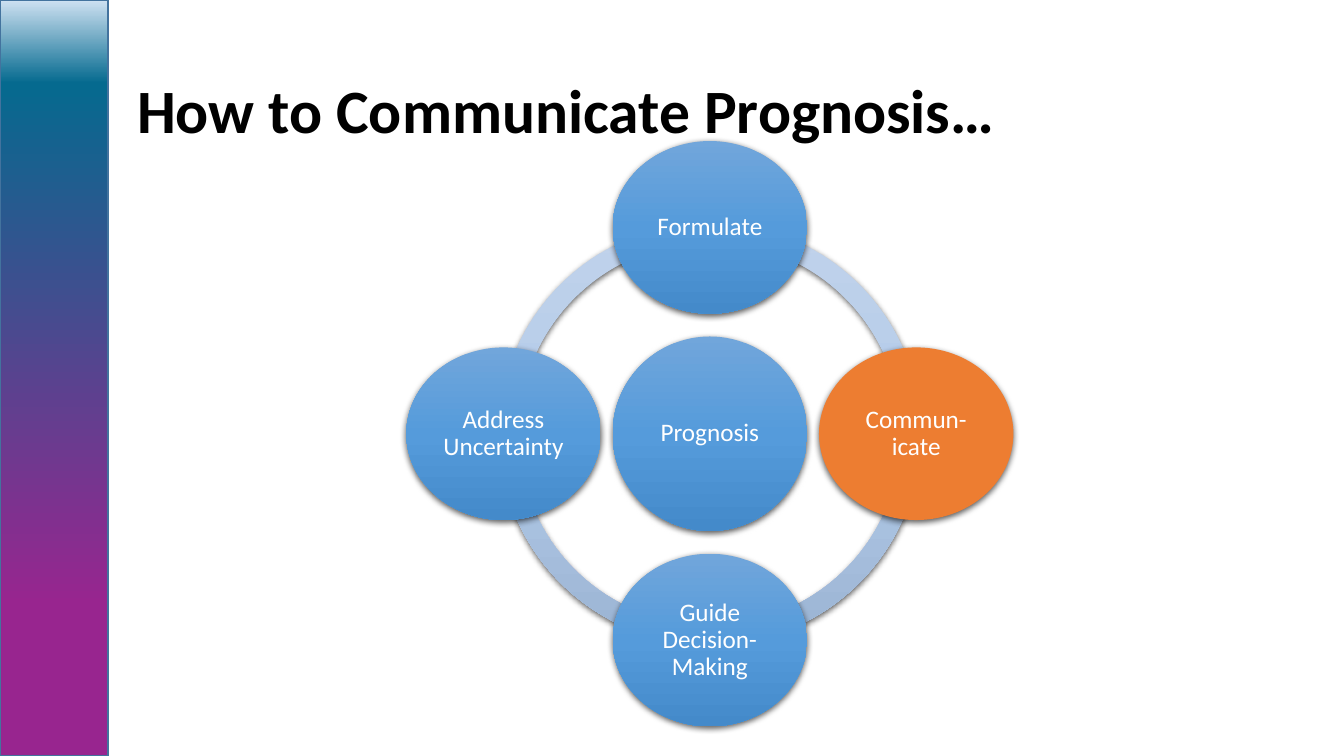
import dataclasses
import math
from typing import Any, Optional

import lxml.etree
import pptx
import pptx.dml.color
import pptx.enum.shapes
import pptx.enum.text
import pptx.oxml.ns
import pptx.util

Cm = pptx.util.Cm
Pt = pptx.util.Pt
qn = pptx.oxml.ns.qn
Shapes = pptx.enum.shapes.MSO_SHAPE
Align = pptx.enum.text.PP_ALIGN

Stops = list[tuple[int, str]]
BAR_STOPS: Stops = [(20, "98258F"), (89, "056A8F"), (100, "CEE1F2")]
RING_STOPS: Stops = [(0, "C0D2EB"), (50, "B3CBE9"), (100, "9BB4D3")]
BLUE_STOPS: Stops = [(0, "71A6DB"), (50, "559BDB"), (100, "448ACA")]

# Cycle geometry in centimetres
CENTER_X, CENTER_Y = 17.89, 10.93
ORBIT = 5.2
RING_SIZE = 10.64
RING_THICKNESS = 0.046
QUARTER_TURN = 54  # 90 degrees in block-arc adjustment units
NODE_WIDTH, NODE_HEIGHT = 4.9, 4.35


@dataclasses.dataclass
class Node:
    text: str
    angle: float = 0  # degrees clockwise from the right
    orbit: float = ORBIT
    height: float = NODE_HEIGHT
    color: Optional[str] = None


NODES = [
    Node("Prognosis", orbit=0, height=NODE_WIDTH),
    Node("Formulate", 270),
    Node("Commun-icate", 0, color="ED7D31"),
    Node("Guide Decision-Making", 90),
    Node("Address Uncertainty", 180),
]


def color(value: str) -> pptx.dml.color.RGBColor:
    return pptx.dml.color.RGBColor.from_string(value)


def fill_gradient(shape: Any, stops: Stops, angle: int) -> None:
    """Fill with any number of stops; the angle runs clockwise."""
    shape.fill.gradient()
    shape.fill.gradient_angle = 360 - angle
    stop_list = shape.element.spPr.find(qn("a:gradFill")).find(qn("a:gsLst"))
    for default_stop in list(stop_list):
        stop_list.remove(default_stop)
    for position, value in stops:
        stop = lxml.etree.SubElement(stop_list, qn("a:gs"), pos=str(position * 1000))
        lxml.etree.SubElement(stop, qn("a:srgbClr"), val=value)


def add_shadow(shape: Any) -> None:
    effects = shape.element.spPr.find(qn("a:effectLst"))
    shadow = lxml.etree.SubElement(
        effects, qn("a:outerShdw"), blurRad=str(Pt(4.5)), dist=str(Pt(1.5)),
        dir="5400000", algn="ctr", rotWithShape="0")
    shadow_color = lxml.etree.SubElement(shadow, qn("a:srgbClr"), val="000000")
    lxml.etree.SubElement(shadow_color, qn("a:alpha"), val="63000")


def add_centered(slide: Any, kind: Any, x: float, y: float, width: float, height: float) -> Any:
    """Add a borderless shape with a soft shadow around a centre point."""
    shape = slide.shapes.add_shape(
        kind, Cm(x - width / 2), Cm(y - height / 2), Cm(width), Cm(height))
    shape.line.fill.background()
    shape.shadow.inherit = False
    add_shadow(shape)
    return shape


def write_text(shape: Any, text: str, *, size: float, value: str, bold: bool = False,
               alignment: Any = Align.LEFT, inset: Optional[float] = None) -> None:
    frame = shape.text_frame
    frame.word_wrap = True
    frame.auto_size = pptx.enum.text.MSO_AUTO_SIZE.NONE
    frame.vertical_anchor = pptx.enum.text.MSO_ANCHOR.MIDDLE
    if inset is not None:
        frame.margin_left = frame.margin_right = Cm(inset)
        frame.margin_top = frame.margin_bottom = Cm(inset)
    paragraph = frame.paragraphs[0]
    paragraph.alignment = alignment
    paragraph.line_spacing = 0.9
    run = paragraph.add_run()
    run.text = text
    run.font.name = "Calibri"
    run.font.size = Pt(size)
    run.font.bold = bold
    run.font.color.rgb = color(value)


def add_side_bar(slide: Any, height: int) -> None:
    bar = slide.shapes.add_shape(Shapes.RECTANGLE, 0, 0, Cm(2.72), height)
    bar.shadow.inherit = False
    fill_gradient(bar, BAR_STOPS, 270)
    bar.line.color.rgb = color("43739E")
    bar.line.width = Pt(1)


def add_ring_quarter(slide: Any, quarter: int) -> None:
    arc = add_centered(slide, Shapes.BLOCK_ARC, CENTER_X, CENTER_Y, RING_SIZE, RING_SIZE)
    arc.adjustments[0] = quarter * QUARTER_TURN
    arc.adjustments[1] = (quarter + 1) % 4 * QUARTER_TURN
    arc.adjustments[2] = RING_THICKNESS
    fill_gradient(arc, RING_STOPS, 90)


def add_node(slide: Any, node: Node) -> None:
    angle = math.radians(node.angle)
    x = CENTER_X + node.orbit * math.cos(angle)
    y = CENTER_Y + node.orbit * math.sin(angle)
    ellipse = add_centered(slide, Shapes.OVAL, x, y, NODE_WIDTH, node.height)
    if node.color:
        ellipse.fill.solid()
        ellipse.fill.fore_color.rgb = color(node.color)
    else:
        fill_gradient(ellipse, BLUE_STOPS, 90)
    write_text(ellipse, node.text, size=18, value="FFFFFF", alignment=Align.CENTER, inset=0.08)


def main() -> None:
    presentation = pptx.Presentation()
    presentation.slide_width = Cm(33.87)
    presentation.slide_height = Cm(19.05)
    slide = presentation.slides.add_slide(presentation.slide_layouts[5])

    # Side bar and title
    add_side_bar(slide, presentation.slide_height)
    title = slide.shapes.title
    title.left, title.top, title.width, title.height = Cm(3.2), Cm(1.02), Cm(29.57), Cm(3.68)
    write_text(title, "How to Communicate Prognosis…", size=44, value="000000", bold=True)

    # Ring behind the nodes
    for quarter in (2, 1, 0, 3):
        add_ring_quarter(slide, quarter)

    # Centre and surrounding steps
    for node in NODES:
        add_node(slide, node)

    presentation.save("out.pptx")


if __name__ == "__main__":
    main()
